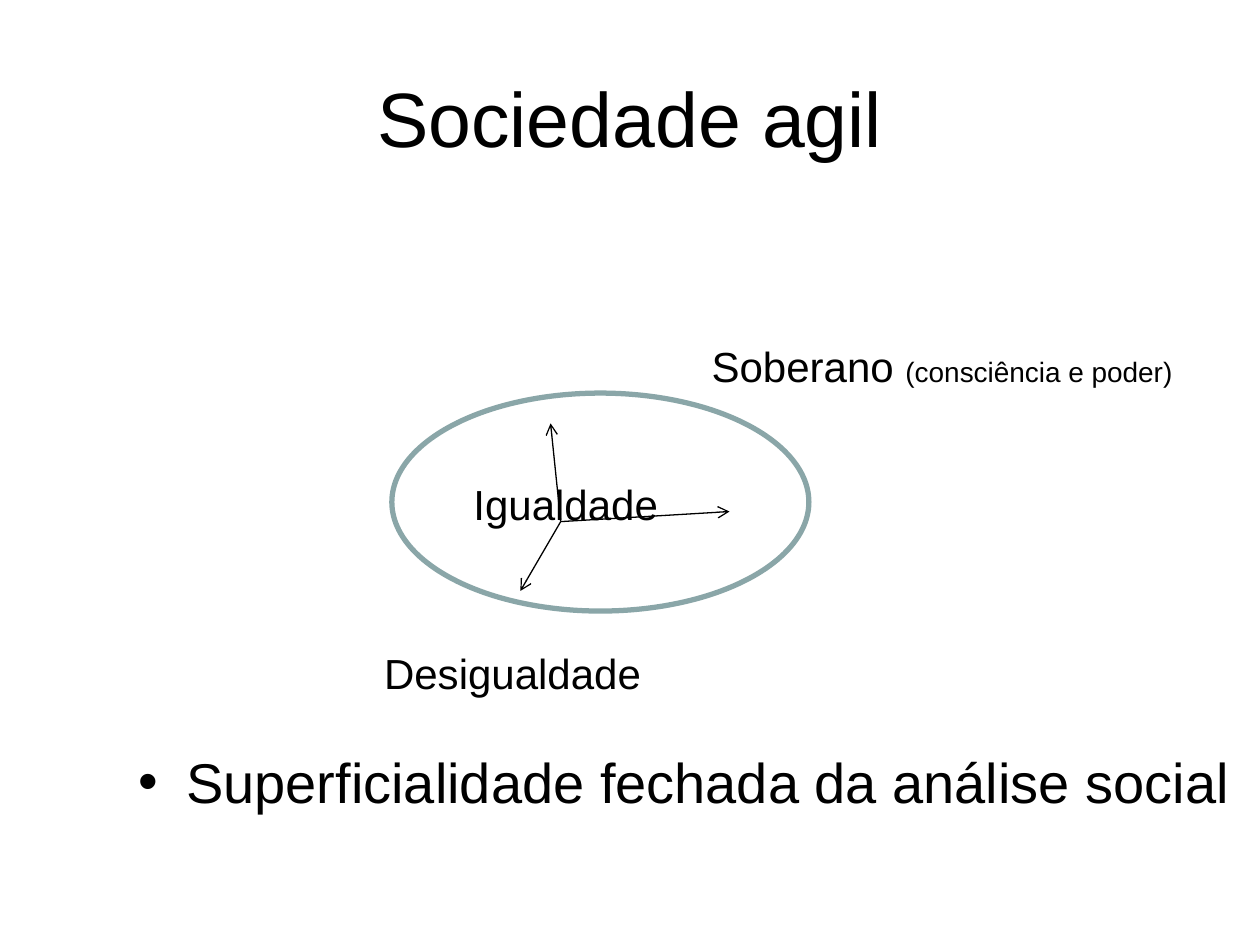
from dataclasses import dataclass

from lxml.etree import SubElement
from pptx import Presentation
from pptx.dml.color import RGBColor as RGB
from pptx.enum.shapes import MSO_CONNECTOR as Link, MSO_SHAPE as Shape
from pptx.enum.text import MSO_ANCHOR as Anchor, MSO_AUTO_SIZE as Fit, PP_ALIGN as Align
from pptx.oxml.ns import qn
from pptx.util import Inches, Pt


@dataclass(frozen=True)
class Theme:
    face: str = "Arial"
    ink: RGB = RGB(0, 0, 0)
    ring: RGB = RGB(0x8A, 0xA6, 0xA8)
    title: int = 44
    body: int = 32
    label: int = 24
    note: int = 16
    thin: float = 0.75
    thick: float = 3


class Deck:
    def __init__(self, theme):
        self.theme = theme
        self.prs = Presentation()
        self.prs.slide_width, self.prs.slide_height = Inches(10), Inches(7.5)
        self.slide = self.prs.slides.add_slide(self.prs.slide_layouts[6])

    def text(self, box, *parts, size, wrap=True, fit=Fit.NONE,
             anchor=Anchor.TOP, align=Align.LEFT, indent=0):
        """Add one paragraph of (words, size or None) parts; indent makes it a bullet."""
        frame = self.slide.shapes.add_textbox(*map(Inches, box)).text_frame
        frame.word_wrap, frame.auto_size = wrap, fit
        frame.vertical_anchor = anchor
        para = frame.paragraphs[0]
        para.alignment = align
        if indent:
            props = para._p.get_or_add_pPr()
            props.set("marL", str(Inches(indent)))
            props.set("indent", str(-Inches(indent)))
            SubElement(props, qn("a:buFont"), typeface=self.theme.face)
            SubElement(props, qn("a:buChar"), char="•")
        font = para.font
        font.name, font.size = self.theme.face, Pt(size)
        font.color.rgb = self.theme.ink
        for words, own in parts:
            run = para.add_run()
            run.text = words
            if own:
                run.font.size = Pt(own)

    def label(self, box, *parts, wrap=False):
        self.text(box, *parts, size=self.theme.label, wrap=wrap,
                  fit=Fit.SHAPE_TO_FIT_TEXT)

    def arrow(self, start, end):
        line = self.slide.shapes.add_connector(
            Link.STRAIGHT, *map(Inches, (*start, *end)))
        line.line.color.rgb = self.theme.ink
        line.line.width = Pt(self.theme.thin)
        SubElement(line.line._get_or_add_ln(), qn("a:tailEnd"), type="arrow")
        SubElement(line._element.spPr, qn("a:effectLst"))

    def ring(self, box):
        oval = self.slide.shapes.add_shape(Shape.OVAL, *map(Inches, box))
        oval.shadow.inherit = False
        oval.fill.background()
        oval.line.color.rgb = self.theme.ring
        oval.line.width = Pt(self.theme.thick)


def main():
    theme = Theme()
    deck = Deck(theme)
    deck.text((0.5, 0.3, 9, 1.25), ("Sociedade agil", None), size=theme.title,
              anchor=Anchor.MIDDLE, align=Align.CENTER)

    hub = (4.45, 4.14)
    for tip in ((4.37, 3.36), (5.79, 4.06), (4.13, 4.69)):
        deck.arrow(hub, tip)

    deck.label((2.95, 5.09, 2.27, 0.5), ("Desigualdade", None))
    deck.label((5.55, 2.65, 3.9, 0.5), ("Soberano ", None),
               ("(consciência e poder)", theme.note))
    deck.label((3.66, 3.75, 2.83, 0.5), ("Igualdade", None), wrap=True)
    deck.ring((3.11, 3.12, 3.31, 1.73))

    deck.text((1, 5.88, 9, 0.74),
              ("Superficialidade fechada da análise social", None),
              size=theme.body, indent=0.38)
    deck.prs.save("out.pptx")


if __name__ == "__main__":
    main()
